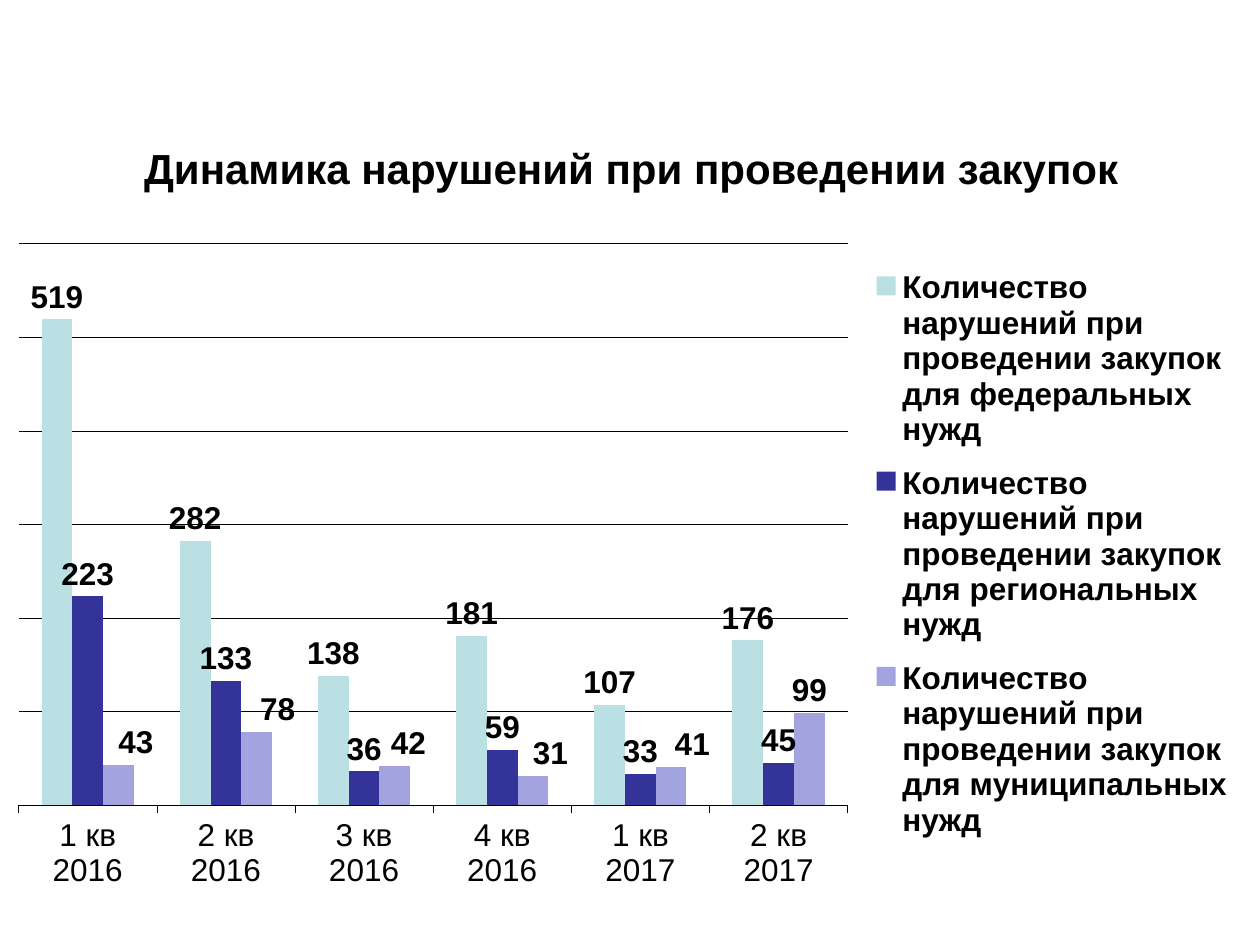
import pptx
import pptx.chart.data
import pptx.dml.color
import pptx.enum.chart
import pptx.enum.text
import pptx.oxml
import pptx.oxml.ns
import pptx.util
from pptx.util import Inches, Pt

RGBColor = pptx.dml.color.RGBColor
BLACK = RGBColor(0x00, 0x00, 0x00)
AQUA = RGBColor(0xBB, 0xE0, 0xE3)
NAVY = RGBColor(0x33, 0x33, 0x99)
LILAC = RGBColor(0xA3, 0xA3, 0xE0)

QUARTERS = ["1 кв 2016", "2 кв 2016", "3 кв 2016", "4 кв 2016", "1 кв 2017", "2 кв 2017"]
SERIES_NAME = "Количество нарушений при проведении закупок для {} нужд"
SERIES = [
    ("федеральных", AQUA, (519, 282, 138, 181, 107, 176)),
    ("региональных", NAVY, (223, 133, 36, 59, 33, 45)),
    ("муниципальных", LILAC, (43, 78, 42, 31, 41, 99)),
]
# Sideways shifts of the municipal labels, as fractions of the chart width
LABEL_SHIFTS = [0.014, 0.017, 0.011, 0.014, 0.017]
BODY_FONT = {"name": "Arial", "size": Pt(18)}
BOLD_FONT = {**BODY_FONT, "bold": True}
TITLE_FONT = {**BOLD_FONT, "size": Pt(24)}


def format_font(font, values):
    for name, value in values.items():
        setattr(font, name, value)
    font.color.rgb = BLACK


def manual_layout(**values):
    """Return a c:layout element holding the given settings in order."""
    items = "".join(f'<c:{tag} val="{val}"/>' for tag, val in values.items())
    return pptx.oxml.parse_xml(
        f'<c:layout {pptx.oxml.ns.nsdecls("c")}>'
        f"<c:manualLayout>{items}</c:manualLayout></c:layout>"
    )


def box_layout(x, y, w, h, **target):
    return manual_layout(**target, xMode="edge", yMode="edge", x=x, y=y, w=w, h=h)


def add_title(slide, left, top, width, height):
    tf = slide.shapes.add_textbox(left, top, width, height).text_frame
    tf.word_wrap = True
    tf.vertical_anchor = pptx.enum.text.MSO_ANCHOR.MIDDLE
    p = tf.paragraphs[0]
    p.alignment = pptx.enum.text.PP_ALIGN.CENTER
    r = p.add_run()
    r.text = "Динамика нарушений при проведении закупок"
    format_font(r.font, TITLE_FONT)


def format_axes(chart):
    axis = chart.category_axis
    axis.major_tick_mark = pptx.enum.chart.XL_TICK_MARK.OUTSIDE
    format_font(axis.tick_labels.font, BODY_FONT)
    values = chart.value_axis
    values.visible = False
    values.minimum_scale, values.maximum_scale, values.major_unit = 0, 600, 100
    values.has_major_gridlines = True
    for line in (axis.format.line, values.major_gridlines.format.line):
        line.color.rgb = BLACK
        line.width = Pt(0.25)


def format_series(series, color):
    series.format.fill.solid()
    series.format.fill.fore_color.rgb = color
    labels = series.data_labels
    labels.show_value = True
    labels.position = pptx.enum.chart.XL_LABEL_POSITION.OUTSIDE_END
    format_font(labels.font, BOLD_FONT)


def shift_labels(series, shifts):
    for i, shift in enumerate(shifts):
        label = series.points[i].data_label
        format_font(label.font, BOLD_FONT)
        label.position = pptx.enum.chart.XL_LABEL_POSITION.OUTSIDE_END
    idxs = series.data_labels._element.xpath("c:dLbl/c:idx")
    for idx, shift in zip(idxs, shifts):
        idx.addnext(manual_layout(x=shift, y=0))


def add_legend(chart):
    chart.has_legend = True
    legend = chart.legend
    legend.position = pptx.enum.chart.XL_LEGEND_POSITION.RIGHT
    legend.include_in_layout = False
    format_font(legend.font, BOLD_FONT)
    for old in legend._element.xpath("c:layout"):
        legend._element.remove(old)
    legend._element.xpath("c:legendPos")[0].addnext(box_layout(0.7, 0.04, 0.29, 0.87))


def add_violations_chart(slide, left, top, width, height):
    data = pptx.chart.data.CategoryChartData()
    data.categories = QUARTERS
    for needs, _, values in SERIES:
        data.add_series(SERIES_NAME.format(needs), values)
    kind = pptx.enum.chart.XL_CHART_TYPE.COLUMN_CLUSTERED
    chart = slide.shapes.add_chart(kind, left, top, width, height, data).chart
    chart.has_title = False
    format_font(chart.font, BODY_FONT)
    plot = chart.plots[0]
    plot.gap_width, plot.overlap, plot.vary_by_categories = 150, 0, False
    format_axes(chart)
    for series, (_, color, _) in zip(plot.series, SERIES):
        format_series(series, color)
    shift_labels(plot.series[-1], LABEL_SHIFTS)
    add_legend(chart)
    area = chart._chartSpace.xpath("c:chart/c:plotArea")[0]
    for old in area.xpath("c:layout"):
        area.remove(old)
    area.insert(0, box_layout(0.015, 0.028, 0.666, 0.809, layoutTarget="inner"))


def main():
    prs = pptx.Presentation()
    prs.slide_width, prs.slide_height = Inches(10), Inches(7.5)
    slide = prs.slides.add_slide(prs.slide_layouts[6])
    add_title(slide, Inches(0.51), Inches(0.99), Inches(9), Inches(0.68))
    add_violations_chart(slide, Inches(0), Inches(1.78), Inches(9.88), Inches(5.51))
    prs.save("out.pptx")


if __name__ == "__main__":
    main()
